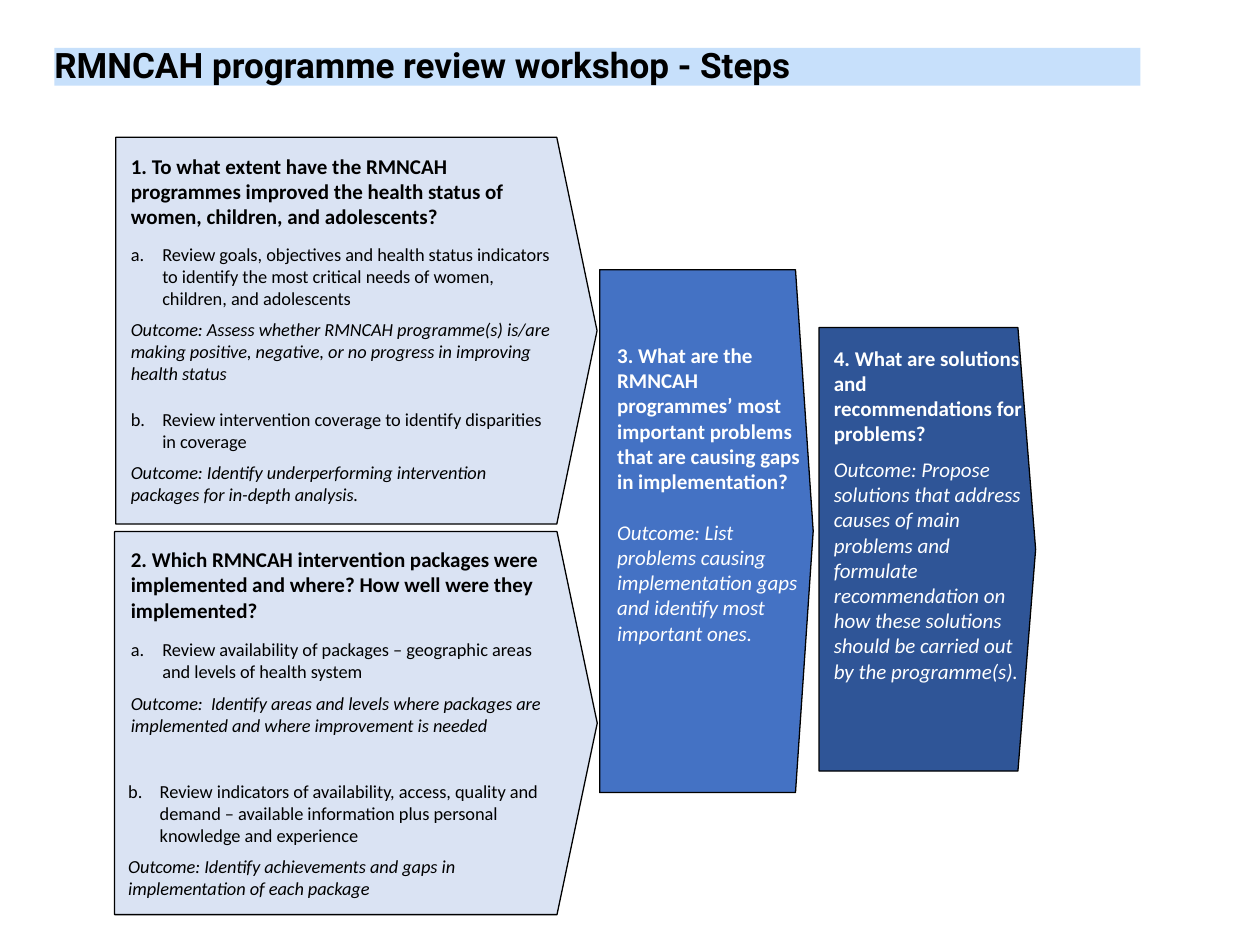
from lxml.etree import SubElement
from pptx import Presentation
from pptx.dml.color import RGBColor
from pptx.enum.shapes import MSO_SHAPE as Shape
from pptx.enum.text import MSO_ANCHOR as Anchor, MSO_AUTO_SIZE as AutoSize, PP_ALIGN as Align
from pptx.oxml.ns import qn
from pptx.util import Pt

TITLE = "RMNCAH programme review workshop - Steps"
BLACK, WHITE = "000000", "FFFFFF"
PALE, MID, DARK = "DAE3F3", "4472C4", "2F5597"

ARROWS = [
    (342.7, 154.1, 122, 298.8, 10.1, MID),
    (65.5, 303.8, 275.8, 218.9, 23, PALE),
    (66.2, 78.5, 275, 221, 23, PALE),
    (468, 187.2, 123.8, 253.4, 10.1, DARK),
]

QUESTIONS = [
    (67.7, 84.2, 255.6, 54.7,
     "1. To what extent have the RMNCAH programmes improved the health status of women, children, and adolescents?"),
    (67.7, 308.9, 255.6, 54.7,
     "2. Which RMNCAH intervention packages were implemented and where? How well were they implemented?"),
]

TASKS = [
    (67.7, 135.4, 256.3, 97.2, 1,
     "Review goals, objectives and health status indicators to identify the most critical needs of women, children, and adolescents",
     "Outcome: Assess whether RMNCAH programme(s) is/are making positive, negative, or no progress in improving health status"),
    (67.7, 229.7, 254.9, 69.8, 2,
     "Review intervention coverage to identify disparities in coverage",
     "Outcome: Identify underperforming intervention packages for in-depth analysis."),
    (67.7, 361.4, 259.2, 83.5, 1,
     "Review availability of packages – geographic areas and levels of health system",
     "Outcome:  Identify areas and levels where packages are implemented and where improvement is needed"),
    (66.2, 442.1, 267.1, 83.5, 2,
     "Review indicators of availability, access, quality and demand – available information plus personal knowledge and experience",
     "Outcome: Identify achievements and gaps in implementation of each package"),
]

CONCLUSIONS = [
    (345.6, 192.2, 120.2, 228.2, 14.6,
     "3. What are the RMNCAH programmes’ most important problems that are causing gaps in implementation?",
     "Outcome: List problems causing implementation gaps and identify most important ones."),
    (469.4, 193.7, 123.8, 236.2, 6,
     "4. What are solutions and recommendations for problems?",
     "Outcome: Propose solutions that address causes of main problems and formulate recommendation on how these solutions should be carried out by the programme(s)."),
]


def color(value):
    return RGBColor.from_string(value)


def place(shape, left, top, width, height):
    shape.left, shape.top, shape.width, shape.height = map(Pt, (left, top, width, height))


def style(para, size, tint, bold=False, italic=False, name="Calibri"):
    font = para.font
    font.name, font.size, font.bold, font.italic = name, Pt(size), bold, italic
    font.color.rgb = color(tint)


def add_title(page):
    title = page.shapes.title
    place(title, 31, 27.4, 620.6, 21.6)
    title.fill.solid()
    title.fill.fore_color.rgb = color("C7E0FB")
    frame = title.text_frame
    frame.margin_left = frame.margin_right = frame.margin_top = frame.margin_bottom = 0
    frame.auto_size, frame.vertical_anchor = AutoSize.NONE, Anchor.MIDDLE
    frame.text = TITLE
    para = frame.paragraphs[0]
    para.alignment, para.line_spacing = Align.LEFT, 0.9
    style(para, 20, BLACK, bold=True, name="Roboto")


def add_arrow(page, left, top, width, height, tip, tint):
    arrow = page.shapes.add_shape(Shape.PENTAGON, *map(Pt, (left, top, width, height)))
    arrow.adjustments[0] = tip / min(width, height)
    arrow.shadow.inherit = False
    arrow.fill.solid()
    arrow.fill.fore_color.rgb = color(tint)
    arrow.line.color.rgb = color(BLACK)
    arrow.line.width = Pt(0.75)


def add_text(page, area, *texts):
    frame = page.shapes.add_textbox(*map(Pt, area)).text_frame
    frame.word_wrap = True
    frame.text = "\n".join(texts)
    return frame.paragraphs


def number(para, start):
    props = para._p.get_or_add_pPr()
    props.set("marL", str(Pt(18)))
    props.set("indent", str(Pt(-18)))
    bullet = SubElement(props, qn("a:buAutoNum"), type="alphaLcPeriod")
    if start > 1:
        bullet.set("startAt", str(start))


def main():
    deck = Presentation()
    deck.slide_width, deck.slide_height = Pt(720), Pt(540)
    page = deck.slides.add_slide(deck.slide_layouts[5])
    add_title(page)
    for arrow in ARROWS:
        add_arrow(page, *arrow)
    for *area, question in QUESTIONS:
        style(add_text(page, area, question)[0], 12, BLACK, bold=True)
    for *area, start, task, outcome in TASKS:
        first, second = add_text(page, area, task, outcome)
        number(first, start)
        style(first, 10.5, BLACK)
        second.space_before = Pt(5.25)
        style(second, 10.5, BLACK, italic=True)
    for *area, gap, question, outcome in CONCLUSIONS:
        first, second = add_text(page, area, question, outcome)
        style(first, 12, WHITE, bold=True)
        second.space_before = Pt(gap)
        style(second, 12, WHITE, italic=True)
    deck.save("out.pptx")


if __name__ == "__main__":
    main()
